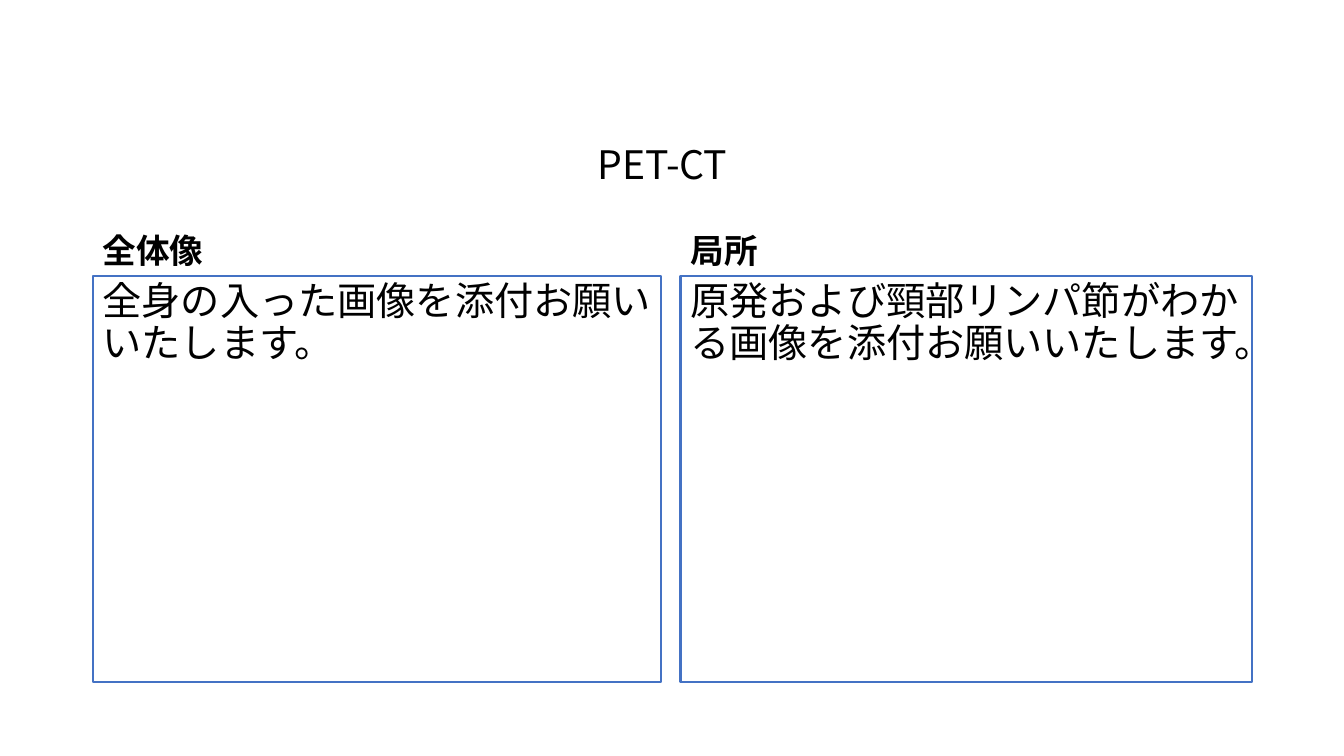
from dataclasses import dataclass

from lxml import etree
from pptx import Presentation
from pptx.dml.color import RGBColor
from pptx.enum.lang import MSO_LANGUAGE_ID
from pptx.enum.shapes import MSO_SHAPE
from pptx.enum.text import MSO_ANCHOR, MSO_AUTO_SIZE, PP_ALIGN
from pptx.oxml.ns import qn
from pptx.util import Emu, Pt

EMU_PER_PX = 9144
RECTANGLE = MSO_SHAPE.RECTANGLE
TOP, BOTTOM = MSO_ANCHOR.TOP, MSO_ANCHOR.BOTTOM
LEFT = PP_ALIGN.LEFT
NO_AUTOFIT = MSO_AUTO_SIZE.NONE
JAPANESE = MSO_LANGUAGE_ID.JAPANESE
TITLE_ONLY = 5

FONT = "Noto Sans CJK JP"
COLORS = {"text": "000000", "border": "4472C4"}

HEADING_TOP, HEADING_HEIGHT = 184, 90
FRAME_TOP, FRAME_HEIGHT = HEADING_TOP + HEADING_HEIGHT, 403


@dataclass(frozen=True)
class Panel:
    left: int
    width: int
    heading: str
    request: str


PANELS = [
    Panel(92, 564, "全体像", "全身の入った画像を添付お願いいたします。"),
    Panel(675, 567, "局所", "原発および頸部リンパ節がわかる画像を添付お願いいたします。"),
]


def px(length: int) -> Emu:
    return Emu(length * EMU_PER_PX)


def box(left: int, top: int, width: int, height: int) -> tuple[Emu, ...]:
    return px(left), px(top), px(width), px(height)


def write_text(shape, text: str, *, size: int = 28, bold: bool = False, anchor=TOP) -> None:
    frame = shape.text_frame
    frame.word_wrap = True
    frame.auto_size = NO_AUTOFIT
    frame.vertical_anchor = anchor
    paragraph = frame.paragraphs[0]
    paragraph.alignment = LEFT
    paragraph.line_spacing = 0.9
    paragraph.space_before = Pt(10)
    run = paragraph.add_run()
    run.text = text
    font = run.font
    font.size = Pt(size)
    font.bold = bold
    font.name = FONT
    font.language_id = JAPANESE
    font.color.rgb = RGBColor.from_string(COLORS["text"])
    latin = run._r.rPr.find(qn("a:latin"))
    east_asian = etree.Element(qn("a:ea"), typeface=FONT)
    latin.addnext(east_asian)


def draw_title(slide, text: str) -> None:
    title = slide.shapes.title
    title.left, title.top, title.width, title.height = box(583, 139, 284, 90)
    write_text(title, text)


def draw_panel(slide, panel: Panel) -> None:
    heading = slide.shapes.add_textbox(
        *box(panel.left, HEADING_TOP, panel.width, HEADING_HEIGHT)
    )
    write_text(heading, panel.heading, size=24, bold=True, anchor=BOTTOM)

    frame = slide.shapes.add_shape(
        RECTANGLE, *box(panel.left, FRAME_TOP, panel.width, FRAME_HEIGHT)
    )
    frame.shadow.inherit = False
    frame.fill.background()
    frame.line.color.rgb = RGBColor.from_string(COLORS["border"])
    frame.line.width = Pt(1.5)
    write_text(frame, panel.request)


def main() -> None:
    presentation = Presentation()
    presentation.slide_width, presentation.slide_height = px(1333), px(750)
    slide = presentation.slides.add_slide(presentation.slide_layouts[TITLE_ONLY])
    draw_title(slide, "PET-CT")
    for panel in PANELS:
        draw_panel(slide, panel)
    presentation.save("out.pptx")


if __name__ == "__main__":
    main()
